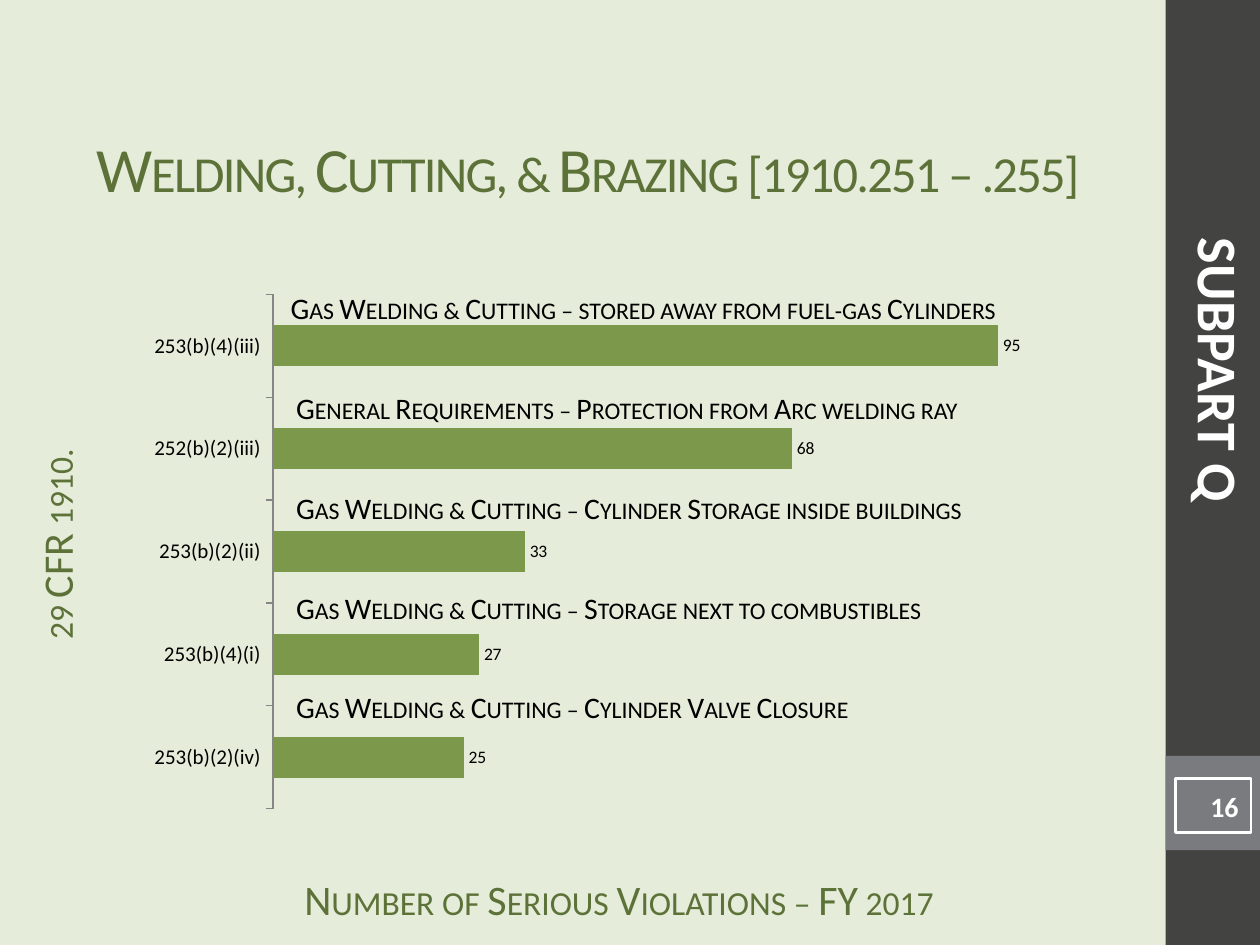
"""Build the slide on serious welding, cutting and brazing violations."""
from dataclasses import dataclass

import pptx
import pptx.chart.data
import pptx.dml.color
import pptx.enum.chart
import pptx.enum.shapes
import pptx.enum.text
import pptx.util
from pptx.util import Cm, Pt

ALIGN = pptx.enum.text.PP_ALIGN
ANCHOR = pptx.enum.text.MSO_ANCHOR
FONT = "Calibri"
GREEN = "5D7238"
BLACK = "000000"
WHITE = "FFFFFF"
CAPTION_TOP, CAPTION_STEP = 5.72, 2.01


@dataclass(frozen=True)
class Box:
    left: float
    top: float
    width: float
    height: float

    def lengths(self) -> tuple:
        return Cm(self.left), Cm(self.top), Cm(self.width), Cm(self.height)


@dataclass(frozen=True)
class Style:
    size: float
    color: str
    bold: bool = False
    small_caps: bool = False
    spacing: int = 0
    align: ALIGN = ALIGN.LEFT


@dataclass(frozen=True)
class Label:
    text: str
    box: Box
    style: Style
    rotation: int = 0
    wrap: bool = True
    top_inset: float = 0.13
    grow: bool = True


@dataclass(frozen=True)
class Violation:
    section: str
    count: int
    caption: str
    left: float
    width: float
    wrap: bool = False


VIOLATIONS = [
    Violation("253(b)(4)(iii)", 95, "Gas Welding & Cutting – stored away from fuel-gas Cylinders", 5.61, 15.34),
    Violation("252(b)(2)(iii)", 68, "General Requirements – Protection from Arc welding ray", 5.72, 14.71),
    Violation("253(b)(2)(ii)", 33, "Gas Welding & Cutting – Cylinder Storage inside buildings", 5.72, 14.33),
    Violation("253(b)(4)(i)", 27, "Gas Welding & Cutting – Storage next to combustibles", 5.72, 17.58, True),
    Violation("253(b)(2)(iv)", 25, "Gas Welding & Cutting – Cylinder Valve Closure", 5.72, 12.12),
]
AXIS_STYLE = Style(24, GREEN, small_caps=True, align=ALIGN.CENTER)
CAPTION_STYLE = Style(17, BLACK, small_caps=True)
LABELS = [
    Label("Number of Serious Violations – FY 2017", Box(5.28, 17.6, 14.4, 0.84), AXIS_STYLE,
          top_inset=0, grow=False),
    Label("29 CFR 1910.", Box(-3.96, 10.24, 10.64, 1.47), AXIS_STYLE, 270, top_inset=0, grow=False),
    Label("SUBPART Q ", Box(17, 6.78, 15.19, 1.62), Style(32, WHITE, bold=True, align=ALIGN.CENTER), 90),
]


def rgb(color: str) -> pptx.dml.color.RGBColor:
    return pptx.dml.color.RGBColor.from_string(color)


def paint(fill, color: str) -> None:
    fill.solid()
    fill.fore_color.rgb = rgb(color)


def write(text_frame, text: str, style: Style) -> None:
    paragraph = text_frame.paragraphs[0]
    paragraph.alignment = style.align
    run = paragraph.add_run()
    run.text = text
    run.font.name, run.font.size, run.font.bold = FONT, Pt(style.size), style.bold
    run.font.color.rgb = rgb(style.color)
    properties = run._r.get_or_add_rPr()
    if style.small_caps:
        properties.set("cap", "small")
    if style.spacing:
        properties.set("spc", str(style.spacing))


def add_rectangle(slide, box: Box, fill: str = "", line: str = ""):
    shape = slide.shapes.add_shape(pptx.enum.shapes.MSO_SHAPE.RECTANGLE, *box.lengths())
    shape.shadow.inherit = False
    if fill:
        paint(shape.fill, fill)
    else:
        shape.fill.background()
    if line:
        shape.line.color.rgb = rgb(line)
        shape.line.width = Pt(1.5)
    else:
        shape.line.fill.background()
    return shape


def add_label(slide, label: Label) -> None:
    shape = slide.shapes.add_textbox(*label.box.lengths())
    shape.rotation = label.rotation
    frame = shape.text_frame
    frame.word_wrap = label.wrap
    frame.margin_top = Cm(label.top_inset)
    if label.grow:
        frame.auto_size = pptx.enum.text.MSO_AUTO_SIZE.SHAPE_TO_FIT_TEXT
    write(frame, label.text, label.style)


def add_violation_chart(slide, box: Box) -> None:
    rows = VIOLATIONS[::-1]
    data = pptx.chart.data.CategoryChartData()
    data.categories = [row.section for row in rows]
    data.add_series("Series 1", [row.count for row in rows])
    chart = slide.shapes.add_chart(
        pptx.enum.chart.XL_CHART_TYPE.BAR_CLUSTERED, *box.lengths(), data).chart
    chart.has_legend = chart.has_title = False
    chart.font.name, chart.font.size = FONT, Pt(10)
    chart.font.color.rgb = rgb(BLACK)
    chart.value_axis.visible = False
    chart.value_axis.has_major_gridlines = False
    axis = chart.category_axis
    axis.major_tick_mark = pptx.enum.chart.XL_TICK_MARK.OUTSIDE
    axis.tick_labels.font.size = Pt(12)
    axis.format.line.color.rgb = rgb("868686")
    plot = chart.plots[0]
    plot.gap_width = 150
    plot.vary_by_categories = False
    paint(plot.series[0].format.fill, "7C984A")
    plot.has_data_labels = True
    plot.data_labels.show_value = True
    plot.data_labels.position = pptx.enum.chart.XL_LABEL_POSITION.OUTSIDE_END


def add_title(slide, box: Box) -> None:
    title = slide.shapes.title
    title.left, title.top, title.width, title.height = box.lengths()
    title.text_frame.word_wrap = True
    title.text_frame.auto_size = pptx.enum.text.MSO_AUTO_SIZE.NONE
    title.text_frame.vertical_anchor = ANCHOR.MIDDLE
    write(title.text_frame, "Welding, Cutting, & Brazing [1910.251 – .255]",
          Style(36, GREEN, small_caps=True, spacing=-100))


def main() -> None:
    presentation = pptx.Presentation()
    presentation.slide_width, presentation.slide_height = Cm(25.4), Cm(19.05)
    slide = presentation.slides.add_slide(presentation.slide_layouts[5])
    paint(slide.background.fill, "E5ECD9")
    add_title(slide, Box(1.7, 1.47, 21.74, 3.81))
    add_rectangle(slide, Box(23.5, 0, 1.9, 19.05), "434342")
    add_rectangle(slide, Box(23.5, 15.24, 1.9, 1.9), "797B7E")
    add_violation_chart(slide, Box(2.74, 5.72, 18.52, 10.8))
    number = add_rectangle(slide, Box(23.7, 15.7, 1.52, 1.09), line=WHITE)
    number.text_frame.vertical_anchor = ANCHOR.MIDDLE
    write(number.text_frame, "16", Style(16, WHITE, bold=True, align=ALIGN.RIGHT))
    for label in LABELS:
        add_label(slide, label)
    for index, row in enumerate(VIOLATIONS):
        box = Box(row.left, CAPTION_TOP + index * CAPTION_STEP, row.width, 0.99)
        add_label(slide, Label(row.caption, box, CAPTION_STYLE, wrap=row.wrap))
    presentation.save("out.pptx")


if __name__ == "__main__":
    main()
